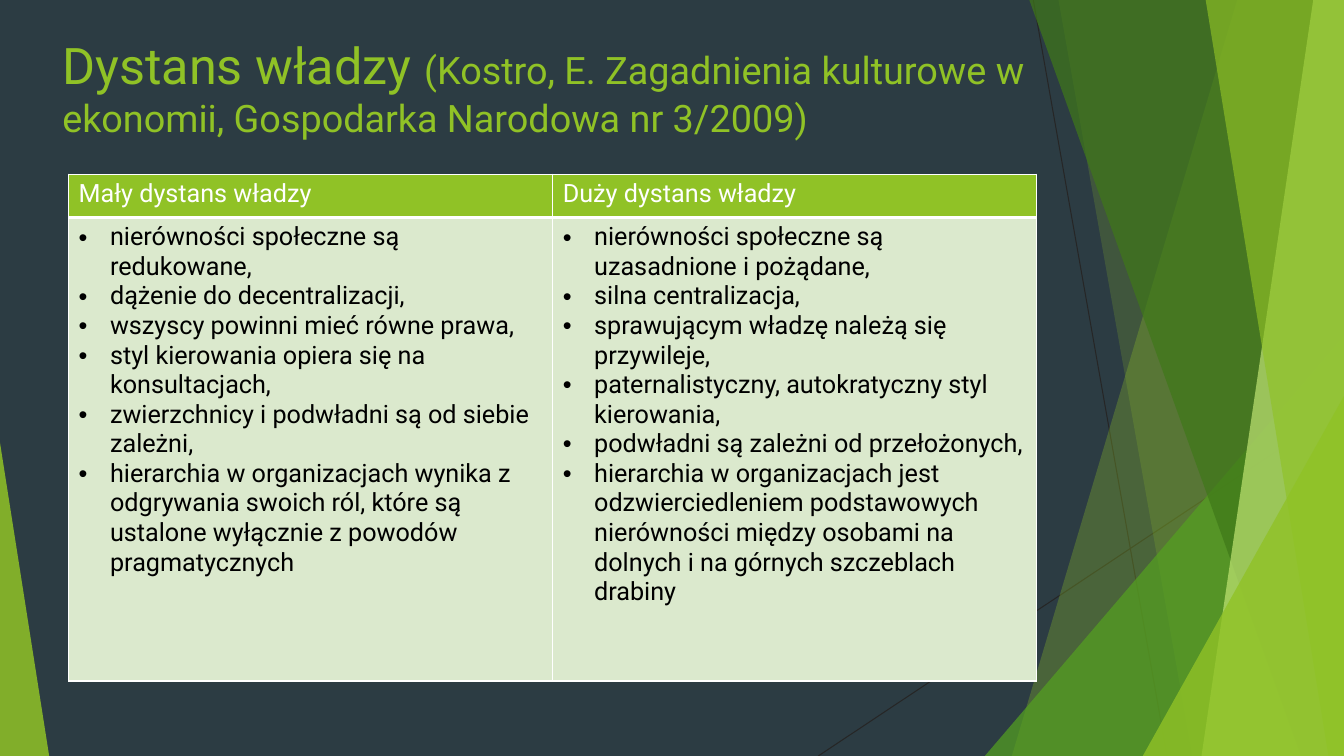
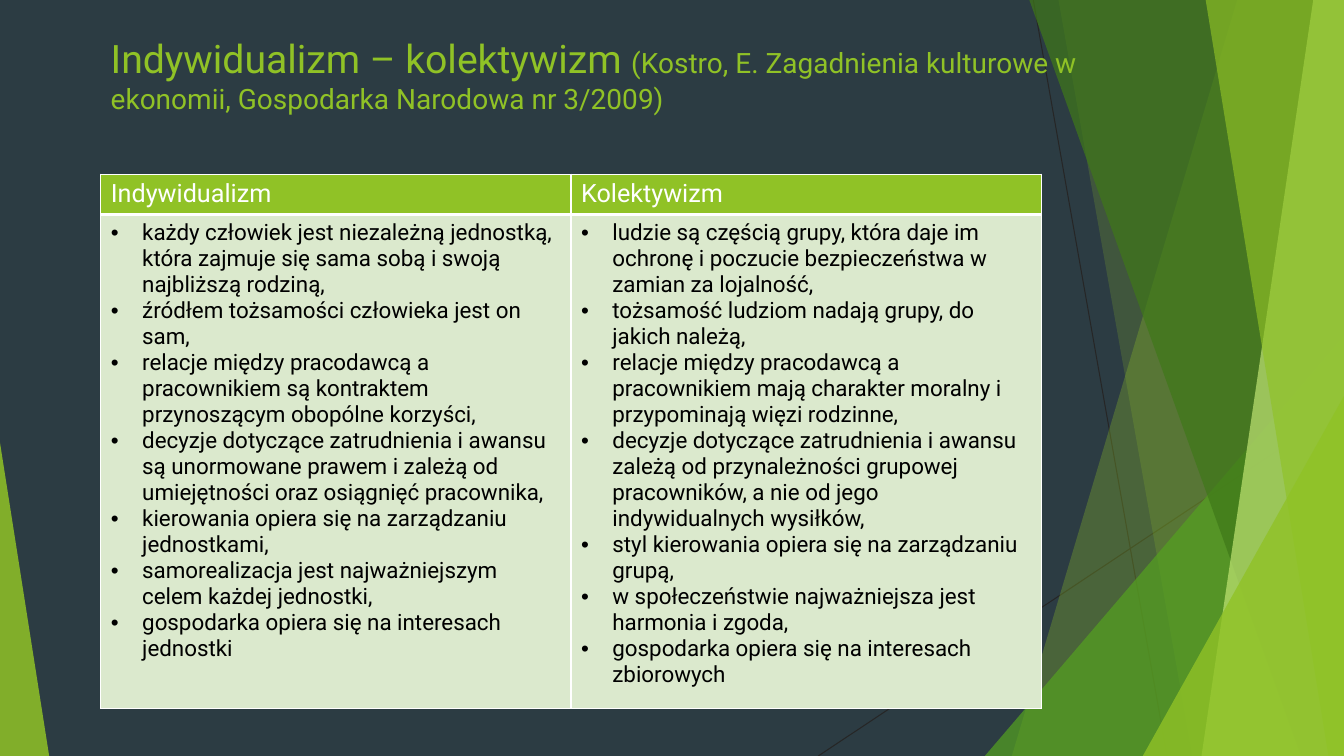
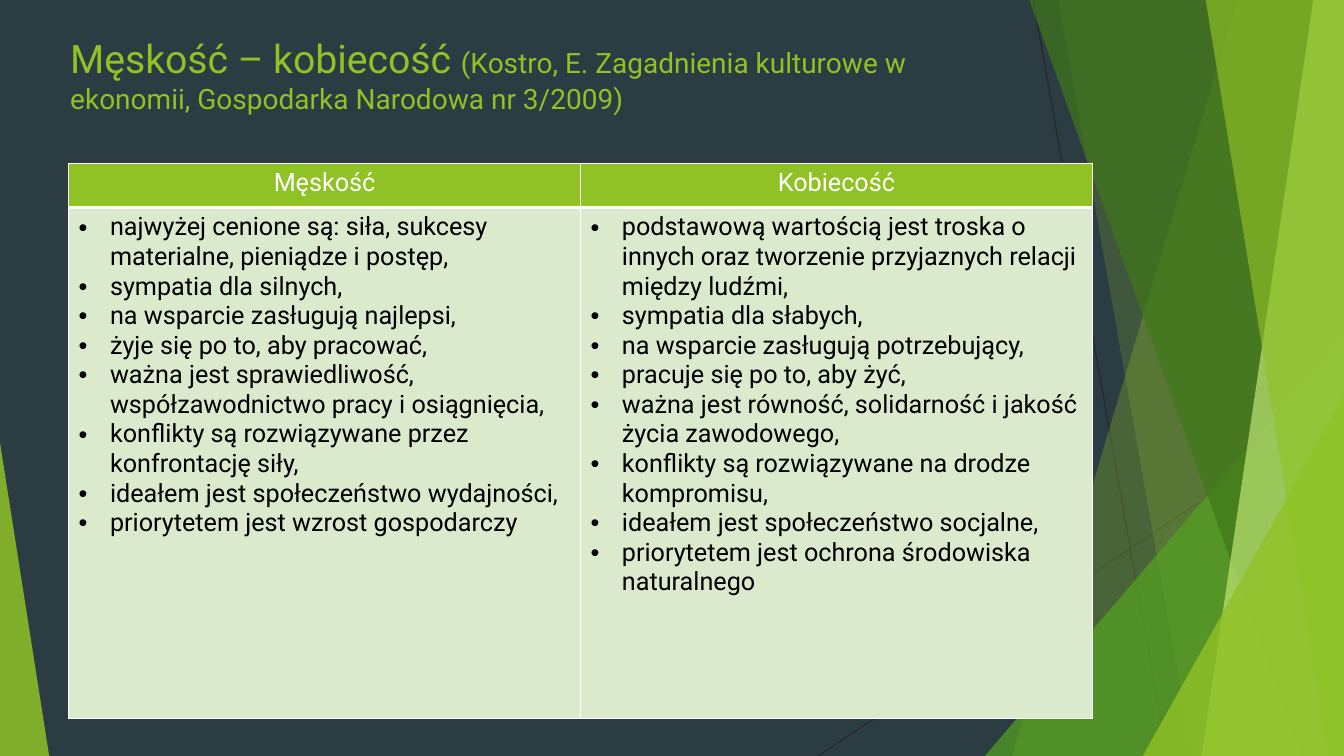
from lxml.etree import SubElement
from pptx import Presentation
from pptx.dml.color import RGBColor
from pptx.enum.shapes import MSO_CONNECTOR, MSO_SHAPE
from pptx.enum.text import MSO_ANCHOR, PP_ALIGN
from pptx.oxml import parse_xml
from pptx.oxml.ns import nsdecls, qn
from pptx.util import Cm, Pt

FONT = "Roboto"
HUES = {
    "back": "2C3C43", "lime": "90C226", "green": "54A021", "dark": "3F7819",
    "pale": "C0E474", "wire": "262626", "cell": "DBE9CD",
    "white": "FFFFFF", "black": "000000",
}
WIDE, HIGH = 33.87, 19.05
RISE = -0.03
INDENT = 0.79
SOURCE = "(Kostro, E. Zagadnienia kulturowe w ekonomii, Gospodarka Narodowa nr 3/2009)"

WIRES = [(26.04, 0, 29.41, HIGH), (WIDE, 10.24, 20.62, HIGH)]
SHARDS = [
    ("band", "lime", 30, (31.19, 25.5)),
    ("band", "lime", 20, (26.67, 30.05)),
    ("peak", "green", 72, (24.82, 8.46, 9.05, 1)),
    ("band", "dark", 70, (25.93, 32.79)),
    ("band", "pale", 70, (33.1, 30.28)),
    ("band", "lime", 65, (30.38, 33.48)),
    ("peak", "lime", 80, (28.8, 9.98, 5.07, 1)),
    ("peak", "lime", 85, (0, 11.15, 1.24, 0)),
]

SLIDES = [
    {
        "title": "Dystans władzy ", "sizes": (36, 27), "box": (1.32, 24.99),
        "table": (1.73, 4.39), "col": 12.2, "rows": (1.09, 11.68),
        "body": 18, "align": PP_ALIGN.LEFT,
        "data": {
            "Mały dystans władzy": [
                "nierówności społeczne są redukowane,",
                "dążenie do decentralizacji,",
                "wszyscy powinni mieć równe prawa,",
                "styl kierowania opiera się na konsultacjach,",
                "zwierzchnicy i podwładni są od siebie zależni,",
                "hierarchia w organizacjach wynika z odgrywania swoich ról, które są ustalone wyłącznie z powodów pragmatycznych",
            ],
            "Duży dystans władzy": [
                "nierówności społeczne są uzasadnione i pożądane,",
                "silna centralizacja,",
                "sprawującym władzę należą się przywileje,",
                "paternalistyczny, autokratyczny styl kierowania,",
                "podwładni są zależni od przełożonych,",
                "hierarchia w organizacjach jest odzwierciedleniem podstawowych nierówności między osobami na dolnych i na górnych szczeblach drabiny",
            ],
        },
    },
    {
        "title": "Indywidualizm – kolektywizm ", "sizes": (28, 20), "box": (2.54, 25.6),
        "table": (2.54, 4.39), "col": 11.85, "rows": (0.98, 11.71),
        "body": 16, "align": PP_ALIGN.LEFT,
        "data": {
            "Indywidualizm": [
                "każdy człowiek jest niezależną jednostką, która zajmuje się sama sobą i swoją najbliższą rodziną,",
                "źródłem tożsamości człowieka jest on sam,",
                "relacje między pracodawcą a pracownikiem są kontraktem przynoszącym obopólne korzyści,",
                "decyzje dotyczące zatrudnienia i awansu są unormowane prawem i zależą od umiejętności oraz osiągnięć pracownika,",
                "kierowania opiera się na zarządzaniu jednostkami,",
                "samorealizacja jest najważniejszym celem każdej jednostki,",
                "gospodarka opiera się na interesach jednostki",
            ],
            "Kolektywizm": [
                "ludzie są częścią grupy, która daje im ochronę i poczucie bezpieczeństwa w zamian za lojalność,",
                "tożsamość ludziom nadają grupy, do jakich należą,",
                "relacje między pracodawcą a pracownikiem mają charakter moralny i przypominają więzi rodzinne,",
                "decyzje dotyczące zatrudnienia i awansu zależą od przynależności grupowej pracowników, a nie od jego indywidualnych wysiłków,",
                "styl kierowania opiera się na zarządzaniu grupą,",
                "w społeczeństwie najważniejsza jest harmonia i zgoda,",
                "gospodarka opiera się na interesach zbiorowych",
            ],
        },
    },
    {
        "title": "Męskość – kobiecość ", "sizes": (28, 20), "box": (1.52, 23.6),
        "table": (1.73, 4.11), "col": 12.9, "rows": (1.12, 12.88),
        "body": 18, "align": PP_ALIGN.CENTER,
        "data": {
            "Męskość": [
                "najwyżej cenione są: siła, sukcesy materialne, pieniądze i postęp,",
                "sympatia dla silnych,",
                "na wsparcie zasługują najlepsi,",
                "żyje się po to, aby pracować,",
                "ważna jest sprawiedliwość, współzawodnictwo pracy i osiągnięcia,",
                "konflikty są rozwiązywane przez konfrontację siły,",
                "ideałem jest społeczeństwo wydajności,",
                "priorytetem jest wzrost gospodarczy",
            ],
            "Kobiecość": [
                "podstawową wartością jest troska o innych oraz tworzenie przyjaznych relacji między ludźmi,",
                "sympatia dla słabych,",
                "na wsparcie zasługują potrzebujący,",
                "pracuje się po to, aby żyć,",
                "ważna jest równość, solidarność i jakość życia zawodowego,",
                "konflikty są rozwiązywane na drodze kompromisu,",
                "ideałem jest społeczeństwo socjalne,",
                "priorytetem jest ochrona środowiska naturalnego",
            ],
        },
    },
]


def hue(name):
    return RGBColor.from_string(HUES[name])


def write(frame, lines, color="black", align=PP_ALIGN.LEFT, bullet=False):
    for i, line in enumerate(lines):
        para = frame.add_paragraph() if i else frame.paragraphs[0]
        para.alignment = align
        if bullet:
            props = para._p.get_or_add_pPr()
            props.set("marL", str(Cm(INDENT)))
            props.set("indent", str(-Cm(INDENT)))
            SubElement(props, qn("a:buFont")).set("typeface", "Arial")
            SubElement(props, qn("a:buChar")).set("char", "•")
        for text, size in line:
            run = para.add_run()
            run.text = text
            run.font.name = FONT
            run.font.size = Pt(size)
            run.font.bold = False
            run.font.color.rgb = hue(color)


def draw_wire(slide, ends):
    wire = slide.shapes.add_connector(MSO_CONNECTOR.STRAIGHT, *map(Cm, ends))
    wire.line.color.rgb = hue("wire")
    wire.line.width = Pt(0.75)
    SubElement(wire._element.spPr, qn("a:effectLst"))


def draw_shard(slide, kind, color, alpha, spot):
    if kind == "band":
        top, base = spot
        path = slide.shapes.build_freeform(Cm(top), Cm(RISE))
        ends = [(WIDE, RISE), (WIDE, HIGH), (base, HIGH)]
        path.add_line_segments([(Cm(x), Cm(y)) for x, y in ends], close=True)
        shard = path.convert_to_shape()
    else:
        left, top, width, tip = spot
        shard = slide.shapes.add_shape(
            MSO_SHAPE.ISOSCELES_TRIANGLE, Cm(left), Cm(top), Cm(width), Cm(HIGH - top))
        shard.adjustments[0] = tip
    shard.shadow.inherit = False
    shard.line.fill.background()
    shard.fill.solid()
    shard.fill.fore_color.rgb = hue(color)
    tint = shard._element.spPr.find(qn("a:solidFill"))[0]
    SubElement(tint, qn("a:alpha")).set("val", str(alpha * 1000))


def style_cell(cell, color, top, base):
    cell.fill.solid()
    cell.fill.fore_color.rgb = hue(color)
    props = cell._tc.get_or_add_tcPr()
    for i, (side, width) in enumerate(zip("LRTB", (1, 1, top, base))):
        props.insert(i, parse_xml(
            f'<a:ln{side} {nsdecls("a")} w="{Pt(width)}"><a:solidFill>'
            f'<a:srgbClr val="{HUES["white"]}"/></a:solidFill></a:ln{side}>'))


def add_title(slide, page):
    left, width = page["box"]
    box = slide.shapes.add_textbox(Cm(left), Cm(0.74), Cm(width), Cm(3.66))
    box.text_frame.word_wrap = True
    box.text_frame.vertical_anchor = MSO_ANCHOR.TOP
    write(box.text_frame, [list(zip((page["title"], SOURCE), page["sizes"]))], color="lime")


def add_grid(slide, page):
    left, top = page["table"]
    data, rows = page["data"], page["rows"]
    grid = slide.shapes.add_table(
        2, len(data), Cm(left), Cm(top), Cm(page["col"] * len(data)), Cm(sum(rows))).table
    grid.horz_banding = False
    for row, height in zip(grid.rows, rows):
        row.height = Cm(height)
    for i, (name, items) in enumerate(data.items()):
        grid.columns[i].width = Cm(page["col"])
        head, body = grid.cell(0, i), grid.cell(1, i)
        write(head.text_frame, [[(name, 18)]], color="white", align=page["align"])
        write(body.text_frame, [[(item, page["body"])] for item in items], bullet=True)
        style_cell(head, "lime", 1, 3)
        style_cell(body, "cell", 3, 1)


def main():
    deck = Presentation()
    deck.slide_width, deck.slide_height = Cm(WIDE), Cm(HIGH)
    fill = deck.slide_master.background.fill
    fill.solid()
    fill.fore_color.rgb = hue("back")
    for page in SLIDES:
        slide = deck.slides.add_slide(deck.slide_layouts[6])
        for ends in WIRES:
            draw_wire(slide, ends)
        for shard in SHARDS:
            draw_shard(slide, *shard)
        add_title(slide, page)
        add_grid(slide, page)
    deck.save("out.pptx")


if __name__ == "__main__":
    main()
